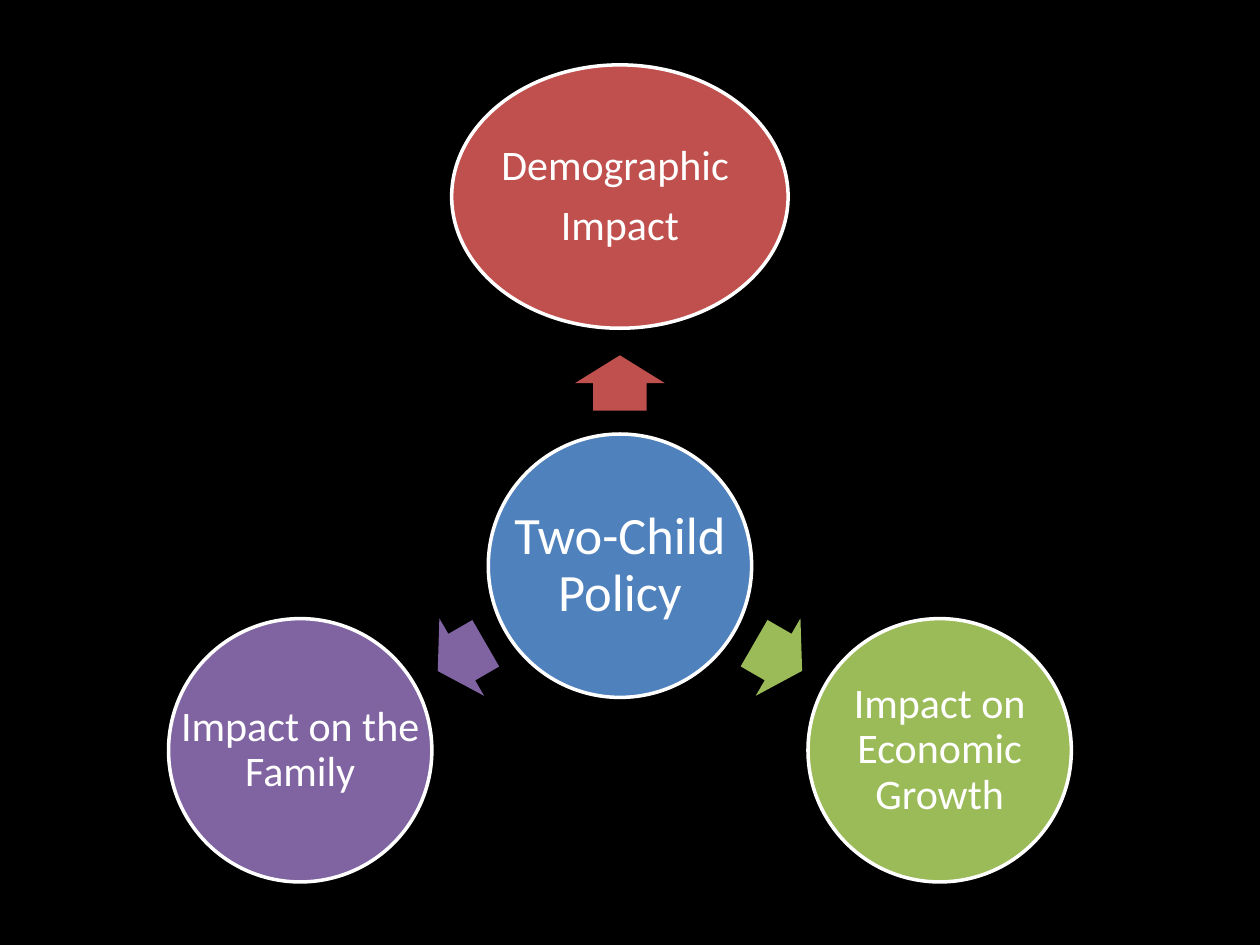
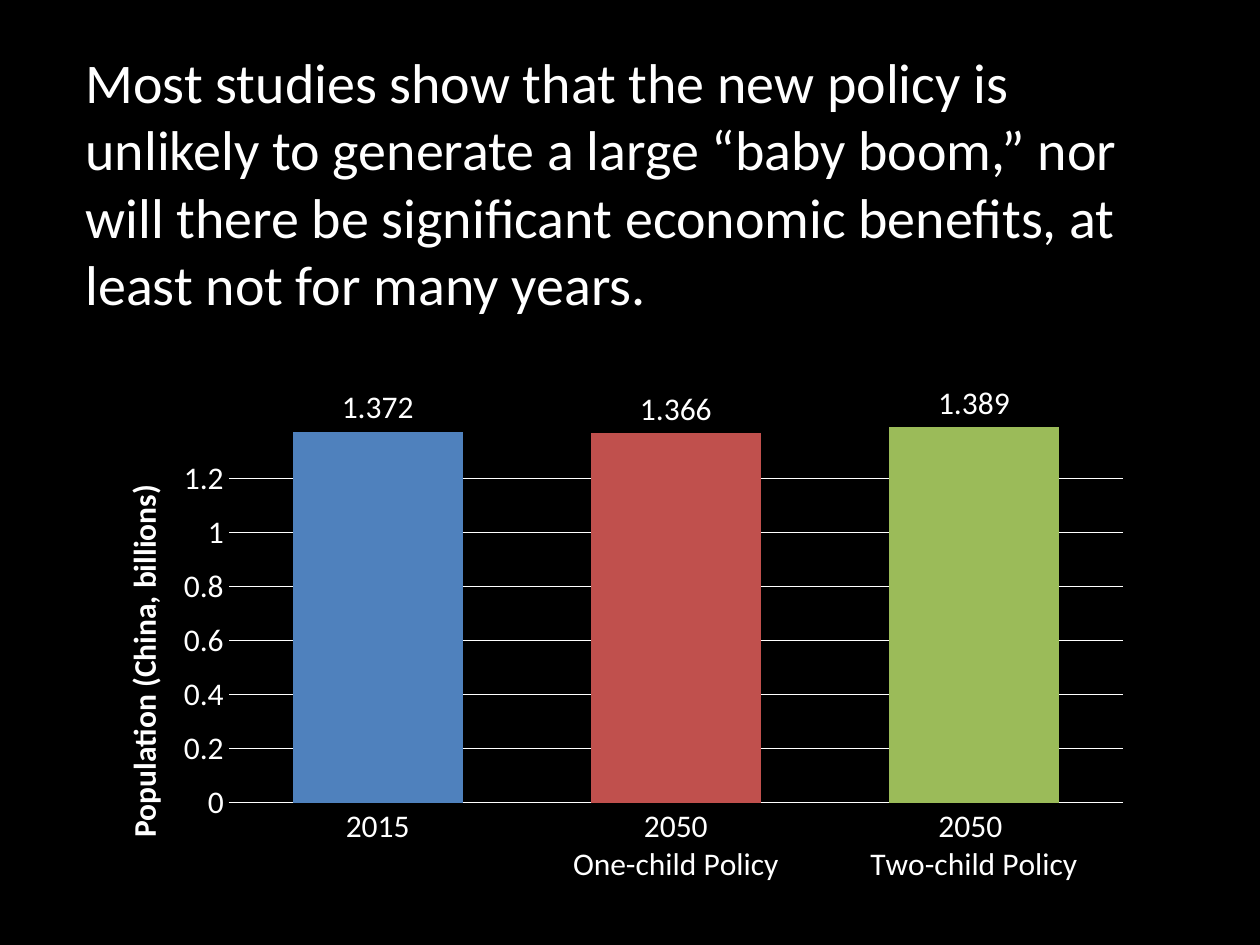
from math import cos, radians, sin

from lxml import etree
from pptx import Presentation
from pptx.chart.data import CategoryChartData
from pptx.dml.color import RGBColor
from pptx.enum import chart as charts, shapes, text
from pptx.oxml.ns import qn
from pptx.util import Pt

PX = 9144  # 100 px to the inch
FONT = "Calibri"
BLACK = RGBColor(0x00, 0x00, 0x00)
WHITE = RGBColor(0xFF, 0xFF, 0xFF)
BLUE = RGBColor(0x4F, 0x81, 0xBD)
RED = RGBColor(0xC0, 0x50, 0x4D)
GREEN = RGBColor(0x9B, 0xBB, 0x59)
PURPLE = RGBColor(0x80, 0x64, 0xA2)

# Hub of the policy diagram
HUB = (492, 449)
ORB = 209
REACH = 293
MIDWAY = 145


def px(*sizes):
    return [round(size * PX) for size in sizes]


def center(x, y, wide, high):
    return px(x - wide / 2, y - high / 2, wide, high)


def spoke(angle, dist):
    turn = radians(angle)
    return HUB[0] + dist * cos(turn), HUB[1] + dist * sin(turn)


def style(font, size):
    font.name = FONT
    font.size = Pt(size)
    font.color.rgb = WHITE


def new_slide(deck):
    slide = deck.slides.add_slide(deck.slide_layouts[6])
    fill = slide.background.fill
    fill.solid()
    fill.fore_color.rgb = BLACK
    return slide


def add_solid(group, kind, box, color):
    shape = group.add_shape(kind, *box)
    shape.shadow.inherit = False
    shape.fill.solid()
    shape.fill.fore_color.rgb = color
    shape.line.fill.background()
    return shape


def add_text(parent, box, words, size):
    frame = parent.add_textbox(*box).text_frame
    frame.word_wrap = True
    frame.text = words
    for para in frame.paragraphs:
        for run in para.runs:
            style(run.font, size)
    return frame


def add_orb(group, spot, wide, color, words, size, inset):
    box = center(*spot, wide, ORB)
    orb = add_solid(group, shapes.MSO_SHAPE.OVAL, box, color)
    orb.line.color.rgb = WHITE
    orb.line.width = Pt(2)
    # The label spans the whole orb, wider than an oval's own text area
    frame = add_text(group, box, words, size)
    frame.vertical_anchor = text.MSO_ANCHOR.MIDDLE
    frame.margin_left, frame.margin_top, frame.margin_right, frame.margin_bottom = px(*[inset] * 4)
    for para in frame.paragraphs:
        para.alignment = text.PP_ALIGN.CENTER
        para.line_spacing = 0.9
        para.space_after = Pt(size * 0.35)


def add_arrow(group, angle, color):
    box = center(*spoke(angle, MIDWAY), 44, 71)
    arrow = add_solid(group, shapes.MSO_SHAPE.RIGHT_ARROW, box, color)
    arrow.adjustments[0] = 0.6
    arrow.adjustments[1] = 0.5
    arrow.rotation = angle


def set_place(node, index, **parts):
    """Give a chart part a fixed place, in fractions of the chart."""
    for old in node.findall(qn("c:layout")):
        node.remove(old)
    layout = etree.Element(qn("c:layout"))
    manual = etree.SubElement(layout, qn("c:manualLayout"))
    if "w" in parts:
        etree.SubElement(manual, qn("c:layoutTarget")).set("val", "inner")
    for mode in ("xMode", "yMode"):
        etree.SubElement(manual, qn("c:" + mode)).set("val", "edge")
    for name, value in parts.items():
        etree.SubElement(manual, qn("c:" + name)).set("val", str(value))
    node.insert(index, layout)


def add_bars(slide, box, bars, title):
    data = CategoryChartData()
    data.categories = [name for name, _, _ in bars]
    data.add_series("Population", [value for _, value, _ in bars])
    kind = charts.XL_CHART_TYPE.COLUMN_CLUSTERED
    chart = slide.shapes.add_chart(kind, *box, data).chart
    chart.has_title = False
    chart.has_legend = False
    style(chart.font, 18)

    # Bars and their values
    plot = chart.plots[0]
    plot.vary_by_categories = False
    plot.gap_width = 75
    plot.overlap = -25
    for index, (_, _, color) in enumerate(bars):
        fill = plot.series[0].points[index].format.fill
        fill.solid()
        fill.fore_color.rgb = color
    plot.has_data_labels = True
    labels = plot.data_labels
    labels.show_value = True
    labels.position = charts.XL_LABEL_POSITION.OUTSIDE_END
    style(labels.font, 18)

    # Axes
    for axis in (chart.category_axis, chart.value_axis):
        axis.major_tick_mark = charts.XL_TICK_MARK.NONE
        axis.minor_tick_mark = charts.XL_TICK_MARK.NONE
        style(axis.tick_labels.font, 18)
    chart.category_axis.format.line.color.rgb = WHITE
    scale = chart.value_axis
    scale.minimum_scale = 0
    scale.maximum_scale = 1.395
    scale.major_unit = 0.2
    scale.format.line.fill.background()
    scale.has_major_gridlines = True
    scale.major_gridlines.format.line.color.rgb = WHITE

    # Upright axis title
    frame = scale.axis_title.text_frame
    frame.text = title
    font = frame.paragraphs[0].runs[0].font
    style(font, 18)
    font.bold = True
    node = scale.axis_title._element
    body = node.find(".//" + qn("a:bodyPr"))
    body.set("rot", "-5400000")
    body.set("vert", "horz")
    set_place(node, 1, x=0.03, y=0.27)
    area = chart._chartSpace.find(".//" + qn("c:plotArea"))
    set_place(area, 0, x=0.136, y=0.176, w=0.843, h=0.661)


def draw_policy(deck):
    group = new_slide(deck).shapes.add_group_shape().shapes
    add_orb(group, HUB, ORB, BLUE, "Two-Child Policy", 30, 4)
    impacts = [
        (270, 267, RED, "Demographic \nImpact"),
        (30, ORB, GREEN, "Impact on Economic Growth"),
        (150, ORB, PURPLE, "Impact on the Family"),
    ]
    for angle, wide, color, words in impacts:
        add_arrow(group, angle, color)
        add_orb(group, spoke(angle, REACH), wide, color, words, 24, 3)


def draw_studies(deck):
    slide = new_slide(deck)
    words = (
        "Most studies show that the new policy is unlikely to generate "
        "a large “baby boom,” nor will there be significant economic "
        "benefits, at least not for many years."
    )
    frame = add_text(slide.shapes, px(58, 33, 842, 226), words, 32)
    frame.auto_size = text.MSO_AUTO_SIZE.SHAPE_TO_FIT_TEXT
    bars = [
        ("2015", 1.372, BLUE),
        ("2050\nOne-child Policy", 1.366, RED),
        ("2050 \nTwo-child Policy", 1.389, GREEN),
    ]
    add_bars(slide, px(67, 258, 842, 453), bars, "Population (China, billions)")


def main():
    deck = Presentation()
    deck.slide_width, deck.slide_height = px(1000, 750)
    draw_policy(deck)
    draw_studies(deck)
    deck.save("out.pptx")


if __name__ == "__main__":
    main()
